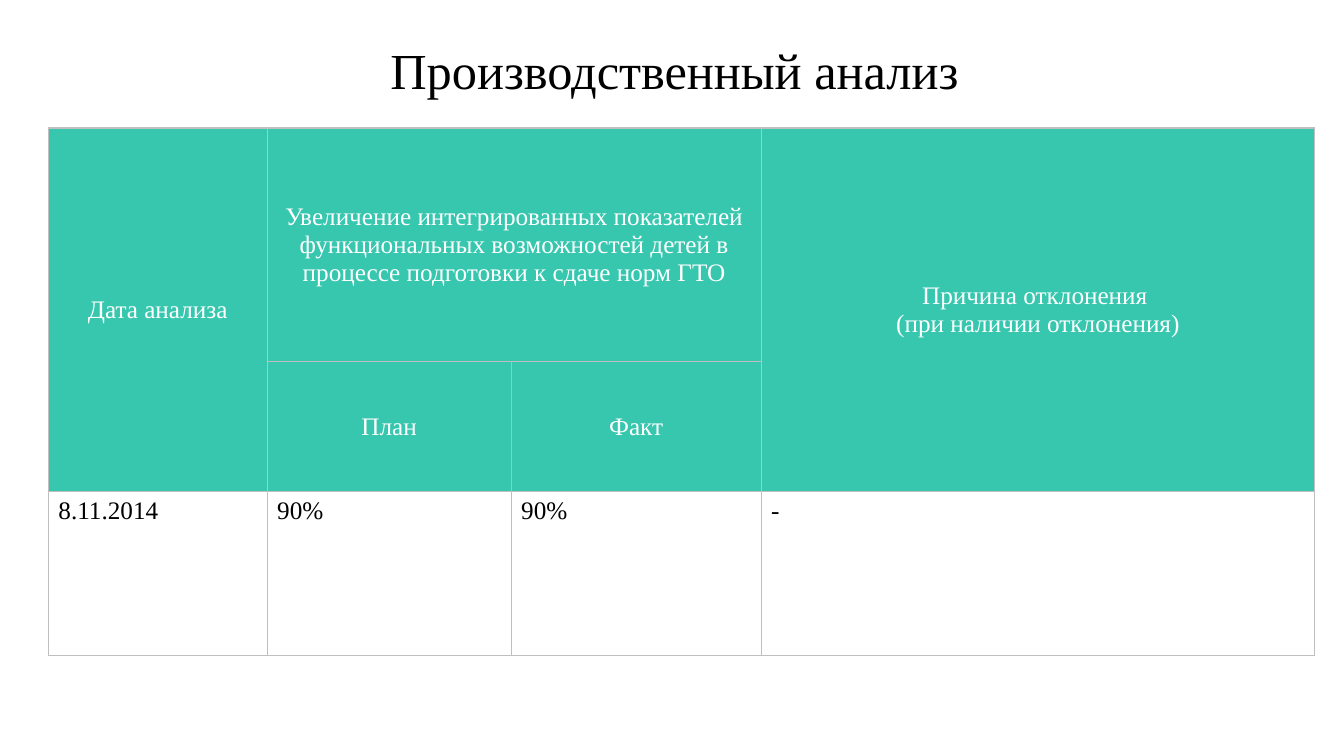
from lxml import etree
from pptx import Presentation
from pptx.dml.color import RGBColor
from pptx.enum.text import MSO_ANCHOR, PP_ALIGN
from pptx.oxml.ns import qn
from pptx.util import Inches, Pt

MIDDLE, TOP = MSO_ANCHOR.MIDDLE, MSO_ANCHOR.TOP
CENTER, LEFT = PP_ALIGN.CENTER, PP_ALIGN.LEFT
BLACK = RGBColor(0x00, 0x00, 0x00)
WHITE = RGBColor(0xFF, 0xFF, 0xFF)
TEAL = RGBColor(0x37, 0xC7, 0xAF)
LIGHT_TEAL = RGBColor(0x73, 0xD8, 0xC7)
GREY = RGBColor(0xBF, 0xBF, 0xBF)
FONT = "Times New Roman"

COLUMN_WIDTHS = [2.17, 2.42, 2.48, 5.49]
ROW_HEIGHTS = [2.32, 1.29, 1.62]
HEADER_ROWS = 2
# (first row, first column, last row, last column)
MERGES = [(0, 0, 1, 0), (0, 1, 0, 2), (0, 3, 1, 3)]
TEXTS = {
    (0, 0): ["Дата анализа"],
    (0, 1): ["Увеличение интегрированных показателей функциональных "
             "возможностей детей в процессе подготовки к сдаче норм ГТО"],
    (0, 3): ["Причина отклонения ", "(при наличии отклонения)"],
    (1, 1): ["План"],
    (1, 2): ["Факт"],
    (2, 0): ["8.11.2014"],
    (2, 1): ["90%"],
    (2, 2): ["90%"],
    (2, 3): ["-"],
}


def write_lines(frame, lines, size, color, align):
    for index, line in enumerate(lines):
        para = frame.add_paragraph() if index else frame.paragraphs[0]
        para.alignment = align
        span = para.add_run()
        span.text = line
        span.font.name = FONT
        span.font.size = Pt(size)
        span.font.color.rgb = color


def set_borders(cell, colors):
    """Put 1 pt lines on the left, right, top and bottom, in that order."""
    properties = cell._tc.get_or_add_tcPr()
    for index, (side, color) in enumerate(zip("LRTB", colors)):
        line = etree.Element(qn(f"a:ln{side}"), w=str(Pt(1)))
        fill = etree.SubElement(line, qn("a:solidFill"))
        etree.SubElement(fill, qn("a:srgbClr"), val=str(color))
        properties.insert(index, line)


deck = Presentation()
deck.slide_width, deck.slide_height = Inches(13.33), Inches(7.5)
page = deck.slides.add_slide(deck.slide_layouts[5])

title = page.shapes.title
title.left, title.top = Inches(0.34), Inches(0.36)
title.width, title.height = Inches(12.7), Inches(0.73)
title.text_frame.vertical_anchor = MIDDLE
write_lines(title.text_frame, ["Производственный анализ"], 36, BLACK, CENTER)
title.text_frame.paragraphs[0].line_spacing = 0.9

table = page.shapes.add_table(
    len(ROW_HEIGHTS), len(COLUMN_WIDTHS), Inches(0.48), Inches(1.27),
    Inches(sum(COLUMN_WIDTHS)), Inches(sum(ROW_HEIGHTS))).table
table.first_row = table.horz_banding = False
for column, width in zip(table.columns, COLUMN_WIDTHS):
    column.width = Inches(width)
for row, height in zip(table.rows, ROW_HEIGHTS):
    row.height = Inches(height)

for top, left, bottom, right in MERGES:
    table.cell(top, left).merge(table.cell(bottom, right))

for row in range(len(ROW_HEIGHTS)):
    for column in range(len(COLUMN_WIDTHS)):
        cell = table.cell(row, column)
        is_header = row < HEADER_ROWS
        if is_header:
            cell.fill.solid()
            cell.fill.fore_color.rgb = TEAL
        else:
            cell.fill.background()
        cell.vertical_anchor = MIDDLE if is_header else TOP
        # The line between plan and fact is lighter in the header
        left_color = LIGHT_TEAL if (row, column) == (1, 2) else GREY
        right_color = LIGHT_TEAL if (row, column) == (1, 1) else GREY
        set_borders(cell, [left_color, right_color, GREY, GREY])
        if (row, column) in TEXTS:
            write_lines(cell.text_frame, TEXTS[row, column], 18,
                        WHITE if is_header else BLACK,
                        CENTER if is_header else LEFT)

deck.save("out.pptx")
